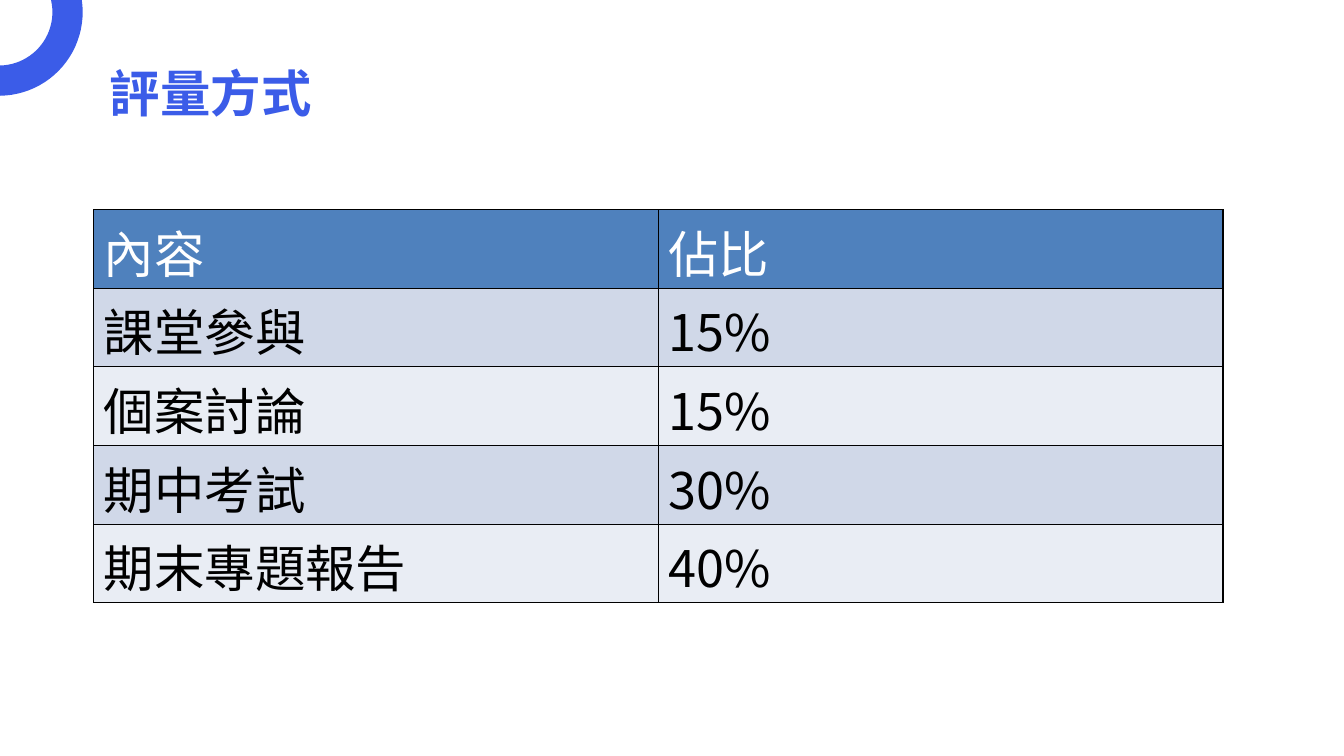
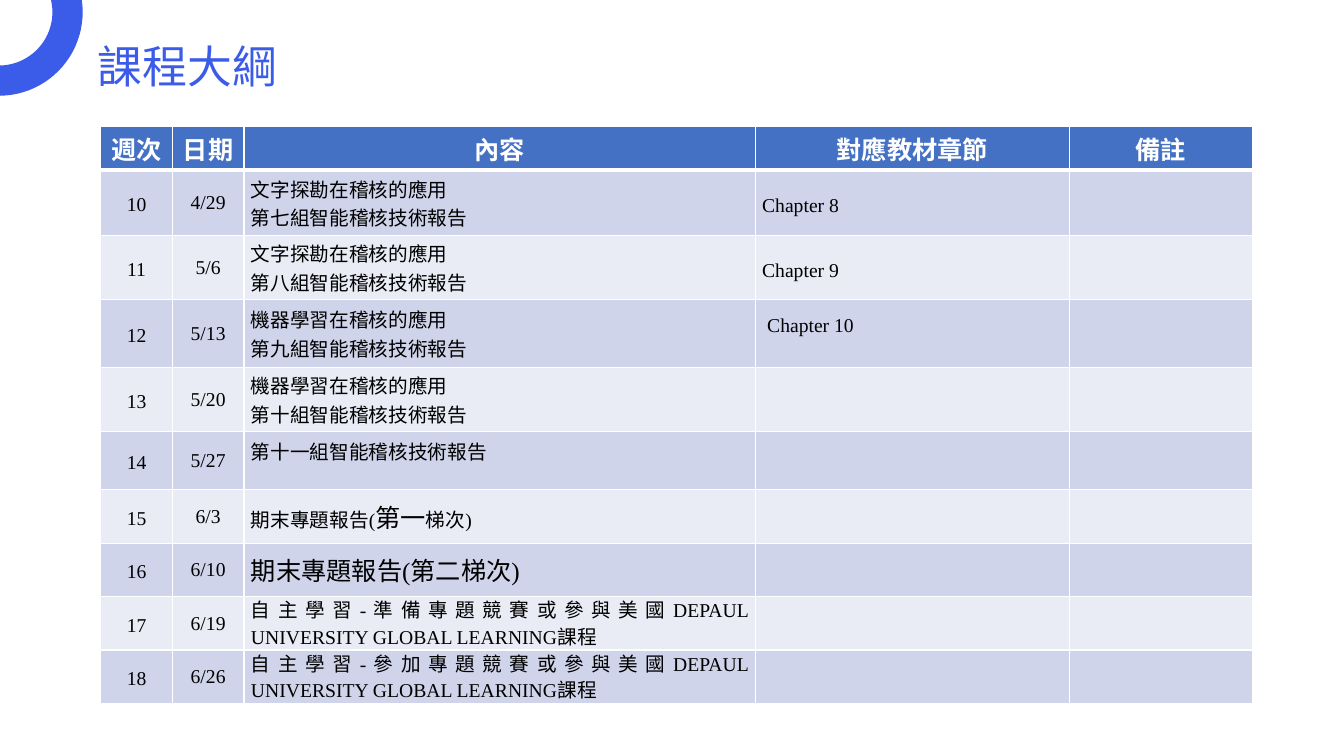
from dataclasses import dataclass
from math import acos, asin, cos, sin

from lxml.etree import SubElement
from pptx import Presentation
from pptx.dml.color import RGBColor
from pptx.enum.text import MSO_ANCHOR as Anchor, PP_ALIGN as Align
from pptx.oxml import parse_xml
from pptx.oxml.ns import nsdecls, qn
from pptx.util import Pt

PX = 9144  # one px is a hundredth of an inch


@dataclass(frozen=True)
class Theme:
    accent: str = "3B5CE8"
    white: str = "FFFFFF"
    black: str = "000000"
    grade_head: str = "4F81BD"
    grade_bands: tuple = ("D0D8E8", "E9EDF4")
    plan_head: str = "4471C4"
    plan_bands: tuple = ("CFD4EA", "E9EBF5")
    sans: str = "Noto Sans CJK SC"
    serif: str = "Times New Roman"
    large: int = 36
    title: int = 32
    heading: int = 18
    body: int = 14


THEME = Theme()

# Content
GRADES = [
    ("內容", "佔比"),
    ("課堂參與", "15%"),
    ("個案討論", "15%"),
    ("期中考試", "30%"),
    ("期末專題報告", "40%"),
]
PLAN_HEAD = ["週次", "日期", "內容", "對應教材章節", "備註"]
BIG = THEME.heading
# Week, date, content lines (each a list of text and size), chapter
PLAN = [
    ("10", "4/29", [[("文字探勘在稽核的應用", 14)], [("第七組智能稽核技術報告", 14)]], "Chapter 8"),
    ("11", "5/6", [[("文字探勘在稽核的應用", 14)], [("第八組智能稽核技術報告", 14)]], "Chapter 9"),
    ("12", "5/13", [[("機器學習在稽核的應用", 14)], [("第九組智能稽核技術報告", 14)]], "Chapter 10"),
    ("13", "5/20", [[("機器學習在稽核的應用", 14)], [("第十組智能稽核技術報告", 14)]], ""),
    ("14", "5/27", [[("第十一組智能稽核技術報告", 14)]], ""),
    ("15", "6/3", [[("期末專題報告(", 14), ("第一", BIG), ("梯次)", 14)]], ""),
    ("16", "6/10", [[("期末專題報告(第二梯次)", BIG)]], ""),
    ("17", "6/19", [[("自主學習-準備專題競賽或參與美國DEPAUL UNIVERSITY GLOBAL LEARNING課程", 14)]], ""),
    ("18", "6/26", [[("自主學習-參加專題競賽或參與美國DEPAUL UNIVERSITY GLOBAL LEARNING課程", 14)]], ""),
]
PLAN_COLS = [71, 71, 507, 312, 181]
PLAN_ROWS = [44, 65, 63, 68, 63, 58, 53, 53, 53, 53]
RAISED = {("12", 3): 22, ("14", 2): 20}  # bottom inset of cells whose text sits high
TIGHT_WEEKS = ("17", "18")  # two lines in a low row


# Text
def add_span(para, text, size, font, color, bold=False):
    span = para.add_run()
    span.text = text
    span.font.size = Pt(size)
    span.font.bold = bold
    span.font.color.rgb = RGBColor.from_string(color)
    span.font.name = font
    SubElement(span._r.get_or_add_rPr(), qn("a:ea"), typeface=THEME.sans)


def set_insets(target, left, top, right, bottom):
    target.margin_left, target.margin_top = left * PX, top * PX
    target.margin_right, target.margin_bottom = right * PX, bottom * PX


def write_lines(frame, lines, font, color, align=Align.LEFT, bold=False, spacing=None):
    for index, line in enumerate(lines):
        para = frame.add_paragraph() if index else frame.paragraphs[0]
        para.alignment = align
        if spacing:
            para.line_spacing = Pt(spacing)
        for text, size in line:
            add_span(para, text, size, font, color, bold)


# Shared page: corner ring and title
def add_ring(page, center_x=-1, center_y=12, outer=83, inner=53, steps=24):
    def arc(radius):
        first, last = -asin(center_y / radius), acos(-center_x / radius)
        angles = [first + (last - first) * step / steps for step in range(steps + 1)]
        return [(round((center_x + radius * cos(a)) * PX),
                 round((center_y + radius * sin(a)) * PX)) for a in angles]

    points = arc(outer) + arc(inner)[::-1]
    builder = page.shapes.build_freeform(*points[0], scale=1.0)
    builder.add_line_segments(points[1:], close=True)
    ring = builder.convert_to_shape()
    ring.shadow.inherit = False
    ring.fill.solid()
    ring.fill.fore_color.rgb = RGBColor.from_string(THEME.accent)
    ring.line.fill.background()


def add_page(deck, title, place, size, bold=False):
    page = deck.slides.add_slide(deck.slide_layouts[6])
    add_ring(page)
    box = page.shapes.add_textbox(*(value * PX for value in place))
    frame = box.text_frame
    frame.word_wrap = True
    set_insets(frame, 1, 0, 0, 0)
    write_lines(frame, [[(title, size)]], THEME.sans, THEME.accent, bold=bold)
    return page


# Tables
def add_grid(page, left, top, cols, rows):
    table = page.shapes.add_table(len(rows), len(cols), left * PX, top * PX,
                                  sum(cols) * PX, sum(rows) * PX).table
    table.first_row = table.horz_banding = False
    for column, width in zip(table.columns, cols):
        column.width = width * PX
    for row, height in zip(table.rows, rows):
        row.height = height * PX
    return table


def paint_cell(cell, fill, border, top=1, bottom=1):
    cell.fill.solid()
    cell.fill.fore_color.rgb = RGBColor.from_string(fill)
    sides = (("L", 1), ("R", 1), ("T", top), ("B", bottom))
    for index, (side, width) in enumerate(sides):
        cell._tc.get_or_add_tcPr().insert(index, parse_xml(
            f'<a:ln{side} {nsdecls("a")} w="{Pt(width)}"><a:solidFill>'
            f'<a:srgbClr val="{border}"/></a:solidFill></a:ln{side}>'))


def row_fill(row, head, bands):
    return bands[(row - 1) % 2] if row else head


def add_grades(deck):
    page = add_page(deck, "評量方式", (108, 62, 230, 72), THEME.large, bold=True)
    table = add_grid(page, 93, 208, [560] * 2, [78] * len(GRADES))
    for row, texts in enumerate(GRADES):
        for column, text in enumerate(texts):
            cell = table.cell(row, column)
            paint_cell(cell, row_fill(row, THEME.grade_head, THEME.grade_bands), THEME.black)
            set_insets(cell, 10, 5, 10, 0)
            write_lines(cell.text_frame, [[(text, THEME.large)]], THEME.sans,
                        THEME.black if row else THEME.white)


def add_plan(deck):
    page = add_page(deck, "課程大綱", (96, 38, 200, 64), THEME.title)
    table = add_grid(page, 100, 125, PLAN_COLS, PLAN_ROWS)

    # Header
    for column, text in enumerate(PLAN_HEAD):
        cell = table.cell(0, column)
        paint_cell(cell, THEME.plan_head, THEME.white, bottom=3)
        set_insets(cell, 0, 4, 0, 0)
        write_lines(cell.text_frame, [[(text, THEME.heading)]], THEME.serif,
                    THEME.white, Align.CENTER, bold=True)

    # Weeks
    for row, (week, date, content, chapter) in enumerate(PLAN, start=1):
        lines = [[[(week, THEME.body)]], [[(date, THEME.body)]], content,
                 [[(chapter, THEME.body)]] if chapter else [], []]
        spacings = [None, None, 19 if week in TIGHT_WEEKS else None, 20, None]
        for column, cell_lines in enumerate(lines):
            cell = table.cell(row, column)
            paint_cell(cell, row_fill(row, THEME.plan_head, THEME.plan_bands),
                       THEME.white, top=3 if row == 1 else 1)
            cell.vertical_anchor = Anchor.MIDDLE
            raised = RAISED.get((week, column), 0)
            if column == 0:
                set_insets(cell, 0, 4, 0, 0)
            else:
                set_insets(cell, 12 if raised and column == 3 else 7, 0, 7, raised)
            write_lines(cell.text_frame, cell_lines, THEME.serif, THEME.black,
                        Align.CENTER if column < 2 else Align.JUSTIFY,
                        spacing=spacings[column])


def main():
    deck = Presentation()
    deck.slide_width, deck.slide_height = 1333 * PX, 750 * PX
    add_grades(deck)
    add_plan(deck)
    deck.save("out.pptx")


if __name__ == "__main__":
    main()
